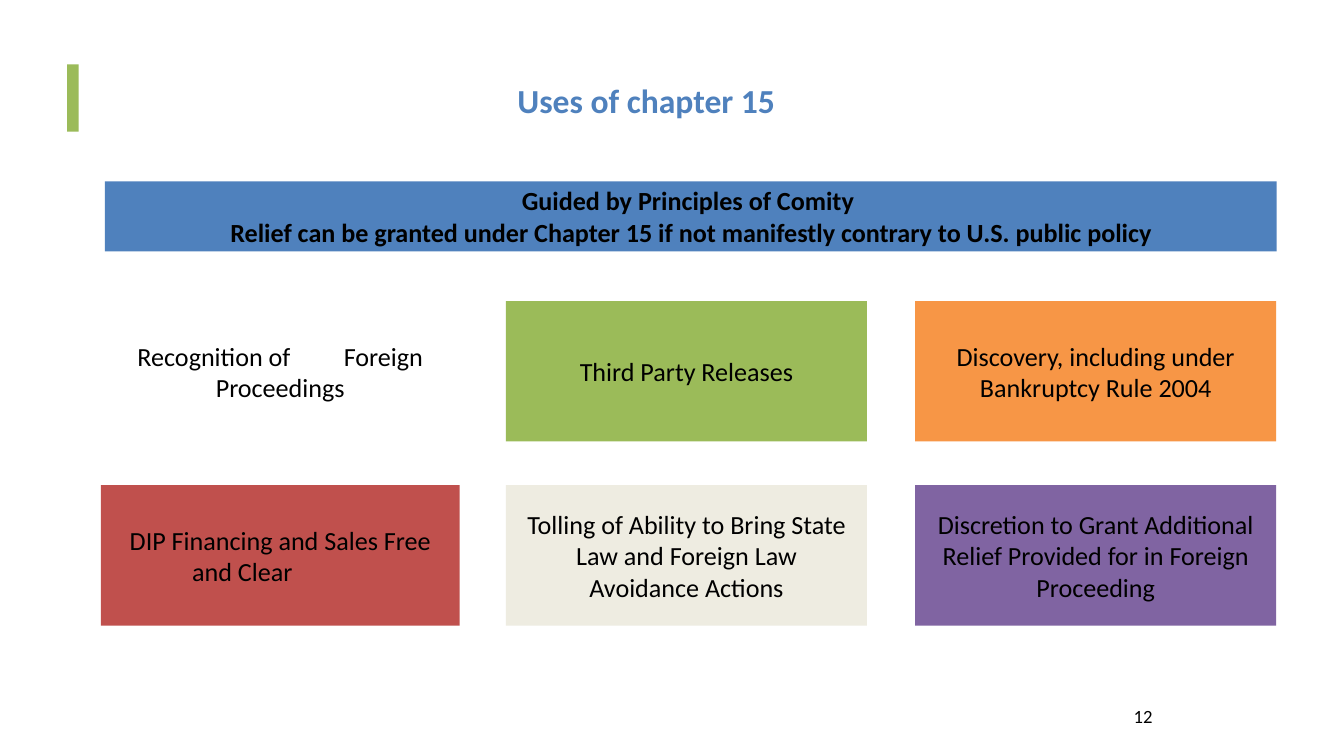
from dataclasses import dataclass
from typing import Optional

from lxml import etree
from pptx import Presentation
from pptx import util as u
from pptx.dml.color import RGBColor
from pptx.enum import shapes, text
from pptx.oxml import ns

FONT = "Calibri"
BLACK, BLUE, GREEN = "000000", "4F81BD", "9BBB59"


@dataclass(frozen=True)
class Box:
    left: float
    top: float
    width: float
    height: float


@dataclass(frozen=True)
class Use:
    wording: str
    fill: str
    tab: Optional[float] = None


def colour(value: str) -> RGBColor:
    return RGBColor.from_string(value)


def lengths(box: Box) -> list:
    return [u.Inches(n) for n in (box.left, box.top, box.width, box.height)]


def add_rectangle(slide, box: Box, fill: str):
    shape = slide.shapes.add_shape(shapes.MSO_SHAPE.RECTANGLE, *lengths(box))
    shape.shadow.inherit = False
    shape.fill.solid()
    shape.fill.fore_color.rgb = colour(fill)
    shape.line.fill.background()
    return shape


def add_tab_stop(paragraph, position: float) -> None:
    properties = paragraph._p.get_or_add_pPr()
    tabs = etree.SubElement(properties, ns.qn("a:tabLst"))
    etree.SubElement(tabs, ns.qn("a:tab"), pos=str(u.Inches(position)), algn="l")


def write(shape, wording: str, *, size: float = 28, color: str = BLACK,
          bold: bool = False, align=text.PP_ALIGN.CENTER,
          anchor=text.MSO_ANCHOR.MIDDLE, inset: Optional[float] = None,
          before: float = 0, tab: Optional[float] = None) -> None:
    frame = shape.text_frame
    frame.word_wrap = True
    frame.vertical_anchor = anchor
    if inset is not None:
        frame.margin_left = frame.margin_right = u.Inches(inset)
        frame.margin_top = frame.margin_bottom = u.Inches(inset)
    frame.text = wording
    for paragraph in frame.paragraphs:
        paragraph.alignment = align
        paragraph.space_before = u.Pt(before)
        if tab is not None:
            add_tab_stop(paragraph, tab)
        for run in paragraph.runs:
            run.font.name = FONT
            run.font.size = u.Pt(size)
            run.font.bold = bold
            run.font.color.rgb = colour(color)


# Grid of uses: (left, width) of each column, top of each row
COLUMNS = [(1.5, 5.34), (7.53, 5.37), (13.62, 5.37)]
ROW_TOPS = [4.48, 7.22]
ROW_HEIGHT = 2.09
USES = [
    [
        Use("Recognition of\tForeign Proceedings", "FFFFFF", tab=3.07),
        Use("Third Party Releases", GREEN),
        Use("Discovery, including under Bankruptcy Rule 2004", "F79646"),
    ],
    [
        Use("DIP Financing and Sales Free and Clear\t", "C0504D", tab=2.62),
        Use("Tolling of Ability to Bring State Law and Foreign Law "
            "Avoidance Actions", "EEECE1"),
        Use("Discretion to Grant Additional Relief Provided for in Foreign "
            "Proceeding", "8064A2"),
    ],
]


def main() -> None:
    presentation = Presentation()
    presentation.slide_width = u.Inches(20)
    presentation.slide_height = u.Inches(11.25)
    slide = presentation.slides.add_slide(presentation.slide_layouts[6])

    # Title with accent bar
    add_rectangle(slide, Box(1, 0.96, 0.17, 1), GREEN)
    title = slide.shapes.add_textbox(*lengths(Box(1.56, 0.82, 16.23, 1.35)))
    write(title, "Uses of chapter 15 ", size=36, color=BLUE, bold=True)

    # Guiding principle
    banner = add_rectangle(slide, Box(1.56, 2.7, 17.44, 1.04), BLUE)
    write(banner,
          "Guided by Principles of Comity \n"
          "Relief can be granted under Chapter 15 if not manifestly contrary "
          "to U.S. public policy",
          bold=True, anchor=text.MSO_ANCHOR.TOP)

    # Uses
    for top, row in zip(ROW_TOPS, USES):
        for (left, width), use in zip(COLUMNS, row):
            card = add_rectangle(slide, Box(left, top, width, ROW_HEIGHT), use.fill)
            write(card, use.wording, inset=0.2, before=5.6, tab=use.tab)

    # Slide number
    number = slide.shapes.add_textbox(*lengths(Box(15.9, 10.46, 1.35, 0.38)))
    write(number, "12", size=20, align=text.PP_ALIGN.RIGHT)

    presentation.save("out.pptx")


if __name__ == "__main__":
    main()
